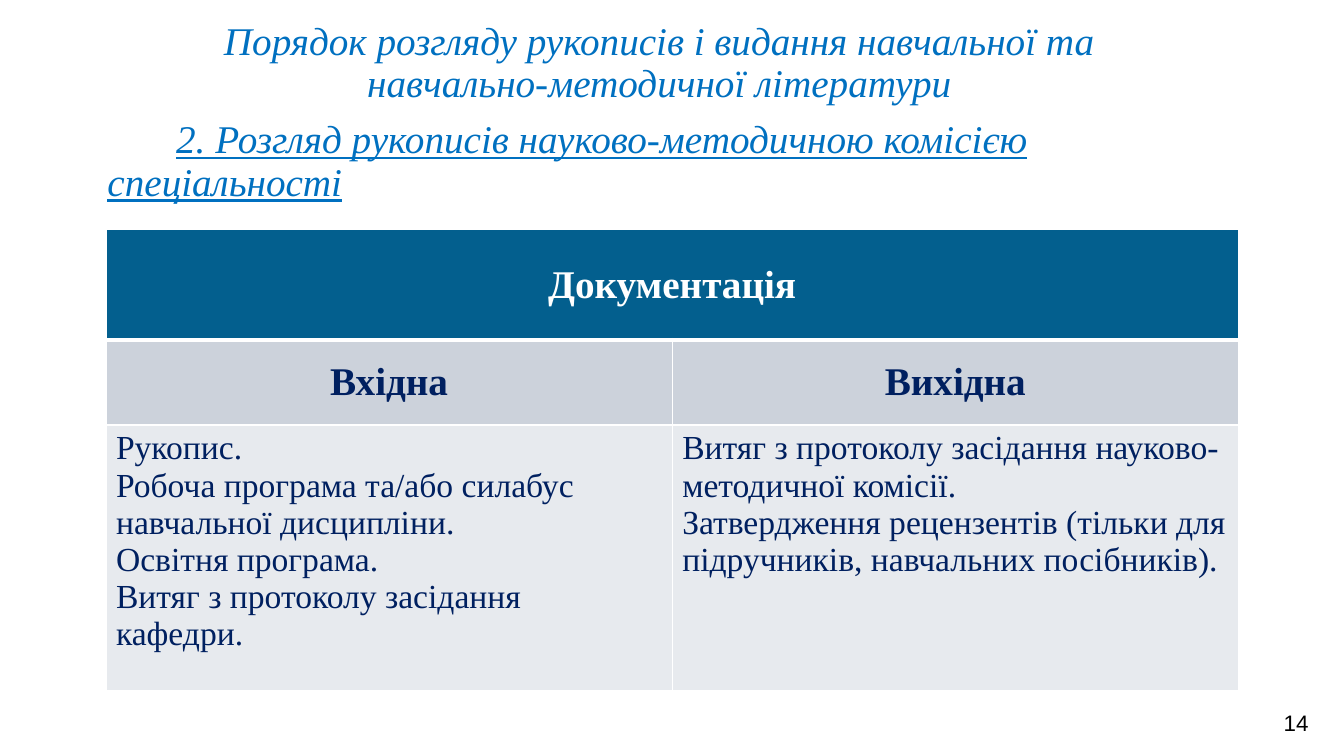
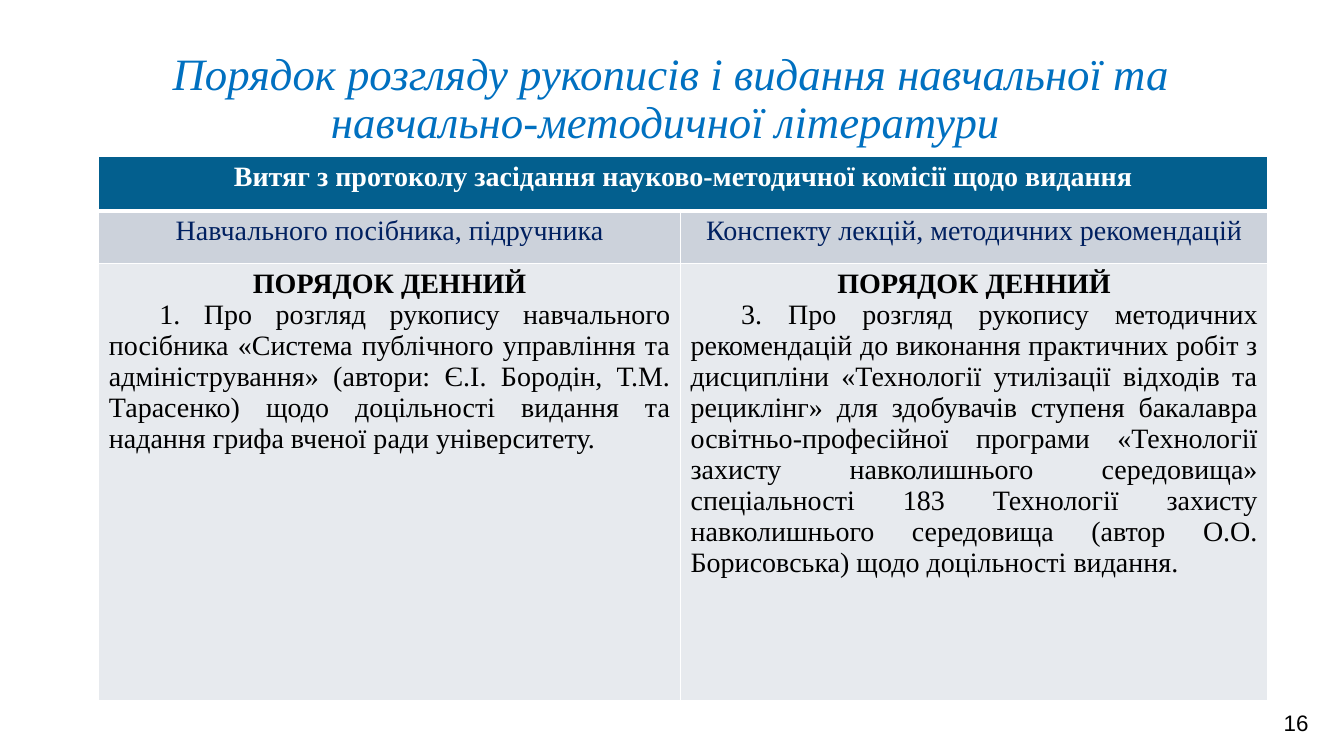
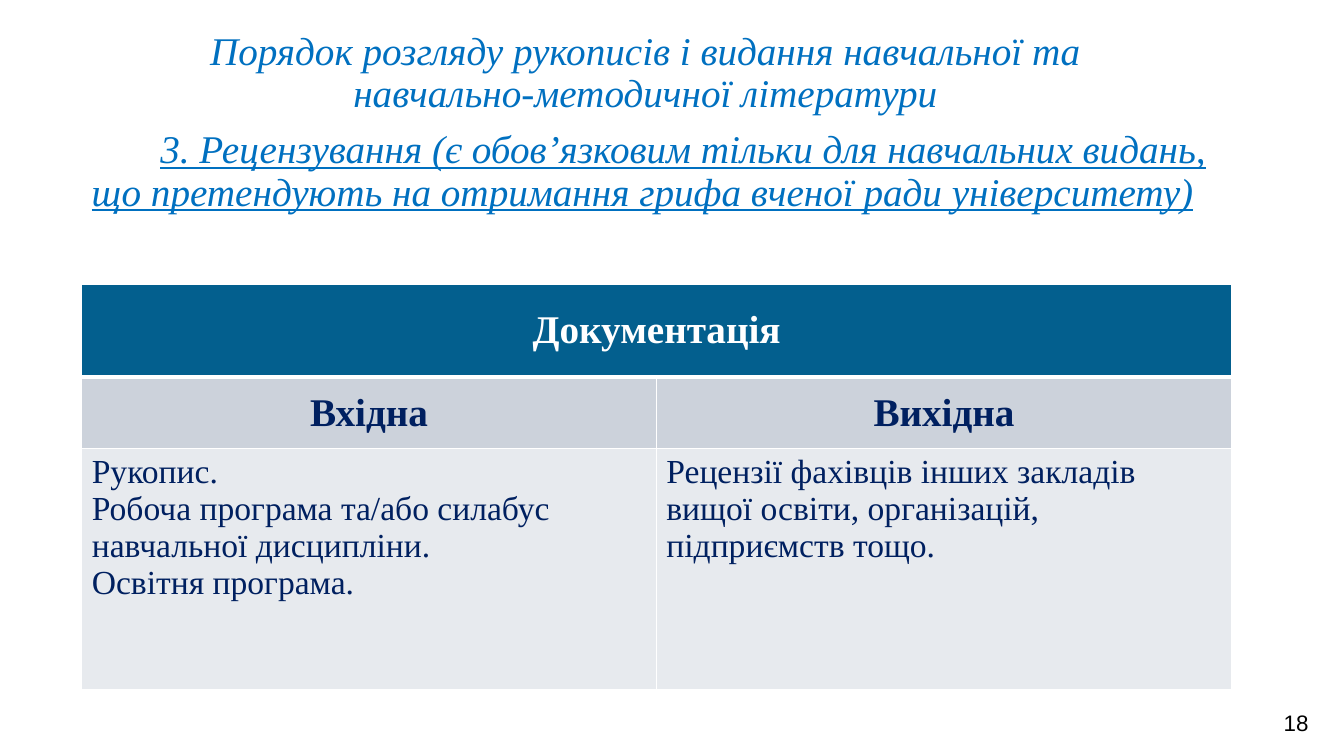
"""Build three slides on how manuscripts of teaching literature are reviewed."""
from dataclasses import dataclass, replace

from lxml import etree
from pptx import Presentation
from pptx.dml.color import RGBColor
from pptx.enum.text import MSO_ANCHOR, PP_ALIGN
from pptx.oxml.ns import qn
from pptx.util import Cm, Pt

LEFT, CENTER, JUSTIFY = PP_ALIGN.LEFT, PP_ALIGN.CENTER, PP_ALIGN.JUSTIFY
TOP, MIDDLE = MSO_ANCHOR.TOP, MSO_ANCHOR.MIDDLE

BLUE = RGBColor(0x00, 0x70, 0xC0)
TEAL = RGBColor(0x03, 0x5F, 0x8E)
NAVY = RGBColor(0x00, 0x20, 0x60)
GREY = RGBColor(0xCC, 0xD2, 0xDB)
PALE = RGBColor(0xE7, 0xEA, 0xEE)
WHITE = RGBColor(0xFF, 0xFF, 0xFF)
BLACK = RGBColor(0x00, 0x00, 0x00)

SERIF, SANS = "Times New Roman", "Arial"
ROW_FILLS = (TEAL, GREY, PALE)
THIN, THICK = 1, 3
BLANK_LAYOUT = 6


@dataclass(frozen=True)
class Style:
    size: int
    color: RGBColor
    align: PP_ALIGN = LEFT
    bold: bool = False
    italic: bool = False
    underline: bool = False
    indent: float = 0
    font: str = SERIF
    spacing: float = 1.0
    before: int = 0


@dataclass(frozen=True)
class Line:
    text: str
    style: Style


@dataclass(frozen=True)
class Box:
    left: float
    top: float
    width: float
    height: float


@dataclass(frozen=True)
class Grid:
    left: float
    top: float
    columns: tuple[float, float]
    rows: tuple[float, float, float]
    header: Line
    subheaders: tuple[Line, Line]
    bodies: tuple[list[Line], list[Line]]
    header_anchor: MSO_ANCHOR


@dataclass(frozen=True)
class Page:
    number: int
    title_box: Box
    title_lines: list[Line]
    grid: Grid


NUMBER_BOX = Box(31.85, 17.75, 1.63, 0.94)
NUMBER = Style(16, BLACK, CENTER, font=SANS)
TITLE = Style(28, BLUE, CENTER, italic=True, spacing=0.9)
SECTION = replace(TITLE, align=LEFT, underline=True, indent=1.73, before=10)
HEADER = Style(28, WHITE, CENTER, bold=True)
SUBHEADER = replace(HEADER, color=NAVY)
DOCUMENT = Style(24, NAVY)
MINUTES_HEADER = replace(HEADER, size=20)
MINUTES_SUBHEADER = Style(20, NAVY, CENTER)
AGENDA = Style(20, BLACK, CENTER, bold=True)
AGENDA_ITEM = Style(20, BLACK, JUSTIFY, indent=1.27)

TITLE_START = "Порядок розгляду рукописів і видання навчальної та "
TITLE_END = "навчально-методичної літератури "


def section_title(section: str) -> list[Line]:
    return [Line(f"{TITLE_START}\v{TITLE_END}", TITLE), Line(section, SECTION)]


def document_grid(left: float, top: float, columns: tuple[float, float],
                  rows: tuple[float, float, float],
                  incoming: list[str], outgoing: list[str]) -> Grid:
    return Grid(
        left, top, columns, rows, Line("Документація", HEADER),
        (Line("Вхідна", SUBHEADER), Line("Вихідна", SUBHEADER)),
        ([Line(text, DOCUMENT) for text in incoming],
         [Line(text, DOCUMENT) for text in outgoing]),
        MIDDLE,
    )


def agenda(item: str) -> list[Line]:
    return [Line("ПОРЯДОК ДЕННИЙ", AGENDA), Line(item, AGENDA_ITEM)]


PAGES = (
    Page(
        14, Box(2.46, 0.41, 28.55, 4.75),
        section_title("2. Розгляд рукописів науково-методичною комісією спеціальності"),
        document_grid(
            2.67, 5.79, (14.27, 14.27), (2.77, 2.15, 6.69),
            ["Рукопис.",
             "Робоча програма та/або силабус навчальної дисципліни.",
             "Освітня програма.",
             "Витяг з протоколу засідання",
             "кафедри."],
            ["Витяг з протоколу засідання науково-методичної комісії.",
             "Затвердження рецензентів (тільки для підручників, навчальних посібників)."],
        ),
    ),
    Page(
        16, Box(2.82, 1.17, 28.19, 3.15),
        [Line(TITLE_START + TITLE_END, replace(TITLE, size=32))],
        Grid(
            2.49, 3.94, (14.66, 14.8), (1.37, 1.32, 11.02),
            Line("Витяг з протоколу засідання науково-методичної комісії щодо видання",
                 MINUTES_HEADER),
            (Line("Навчального посібника, підручника", MINUTES_SUBHEADER),
             Line("Конспекту лекцій, методичних рекомендацій", MINUTES_SUBHEADER)),
            (agenda("1. Про розгляд рукопису навчального посібника «Система публічного "
                    "управління та адміністрування» (автори: Є.І. Бородін, "
                    "Т.М. Тарасенко) щодо доцільності видання та надання грифа вченої "
                    "ради університету."),
             agenda("3. Про розгляд рукопису методичних рекомендацій до виконання "
                    "практичних робіт з дисципліни «Технології утилізації відходів та "
                    "рециклінг» для здобувачів ступеня бакалавра освітньо-професійної "
                    "програми «Технології захисту навколишнього середовища» "
                    "спеціальності 183 Технології захисту навколишнього середовища "
                    "(автор О.О. Борисовська) щодо доцільності видання.")),
            TOP,
        ),
    ),
    Page(
        18, Box(2.06, 0.66, 28.65, 5.69),
        section_title("3. Рецензування (є обов’язковим тільки для навчальних видань, "
                      "що претендують на отримання грифа вченої ради університету)"),
        document_grid(
            2.06, 7.16, (14.48, 14.5), (2.34, 1.8, 6.07),
            ["Рукопис.",
             "Робоча програма та/або силабус",
             "навчальної дисципліни.",
             "Освітня програма."],
            ["Рецензії фахівців інших закладів вищої освіти, організацій, "
             "підприємств тощо."],
        ),
    ),
)


def write_lines(text_frame, lines: list[Line]) -> None:
    text_frame.text = "\n".join(line.text for line in lines)
    for paragraph, line in zip(text_frame.paragraphs, lines):
        style = line.style
        paragraph.alignment = style.align
        paragraph.line_spacing = style.spacing
        paragraph.space_before = Pt(style.before)
        if style.indent:
            properties = paragraph._p.get_or_add_pPr()
            properties.set("marL", "0")
            properties.set("indent", str(Cm(style.indent)))
        for run in paragraph.runs:
            run.font.name = style.font
            run.font.size = Pt(style.size)
            run.font.bold = style.bold
            run.font.italic = style.italic
            run.font.underline = style.underline
            run.font.color.rgb = style.color


def add_text(slide, box: Box, lines: list[Line]) -> None:
    shape = slide.shapes.add_textbox(
        Cm(box.left), Cm(box.top), Cm(box.width), Cm(box.height))
    shape.text_frame.word_wrap = True
    write_lines(shape.text_frame, lines)


def add_borders(cell, top: int, bottom: int) -> None:
    properties = cell._tc.get_or_add_tcPr()
    widths = {"a:lnL": THIN, "a:lnR": THIN, "a:lnT": top, "a:lnB": bottom}
    for tag, width in widths.items():
        border = etree.SubElement(properties, qn(tag), w=str(Pt(width)))
        fill = etree.SubElement(border, qn("a:solidFill"))
        etree.SubElement(fill, qn("a:srgbClr"), val=str(WHITE))


def add_grid(slide, grid: Grid) -> None:
    table = slide.shapes.add_table(
        len(grid.rows), len(grid.columns), Cm(grid.left), Cm(grid.top),
        Cm(sum(grid.columns)), Cm(sum(grid.rows))).table
    for column, width in zip(table.columns, grid.columns):
        column.width = Cm(width)
    for index, (row, height) in enumerate(zip(table.rows, grid.rows)):
        row.height = Cm(height)
        for cell in row.cells:
            add_borders(cell, THICK if index == 1 else THIN,
                        THICK if index == 0 else THIN)
            cell.fill.solid()
            cell.fill.fore_color.rgb = ROW_FILLS[index]
            cell.vertical_anchor = TOP if index == 2 else grid.header_anchor
    table.cell(0, 0).merge(table.cell(0, 1))
    write_lines(table.cell(0, 0).text_frame, [grid.header])
    for column, (subheader, body) in enumerate(zip(grid.subheaders, grid.bodies)):
        write_lines(table.cell(1, column).text_frame, [subheader])
        write_lines(table.cell(2, column).text_frame, body)


def add_page(presentation, page: Page) -> None:
    slide = presentation.slides.add_slide(presentation.slide_layouts[BLANK_LAYOUT])
    add_text(slide, NUMBER_BOX, [Line(str(page.number), NUMBER)])
    add_text(slide, page.title_box, page.title_lines)
    add_grid(slide, page.grid)


def main() -> None:
    presentation = Presentation()
    presentation.slide_width = Cm(33.87)
    presentation.slide_height = Cm(19.05)
    for page in PAGES:
        add_page(presentation, page)
    presentation.save("out.pptx")


if __name__ == "__main__":
    main()
